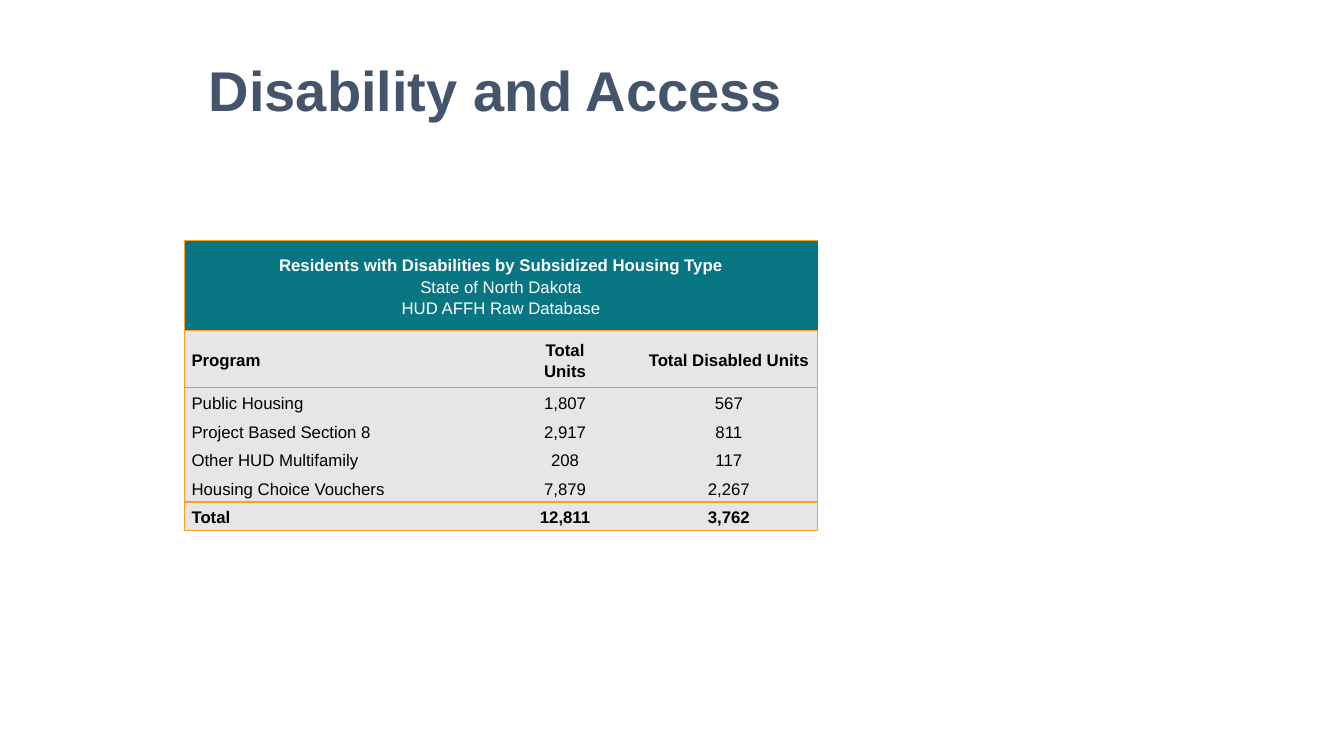
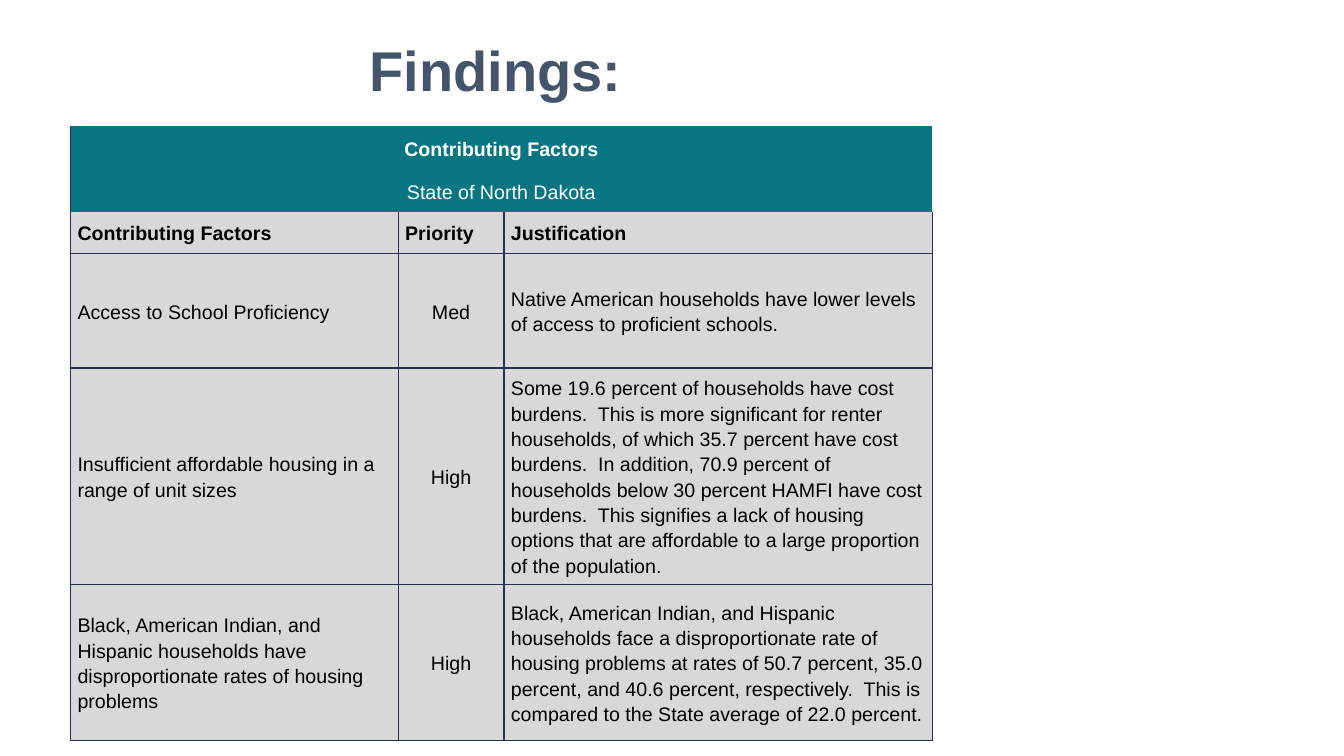
from dataclasses import dataclass

from lxml.etree import SubElement
from pptx import Presentation
from pptx.dml.color import RGBColor
from pptx.enum.text import MSO_ANCHOR, PP_ALIGN
from pptx.oxml.ns import qn
from pptx.util import Pt

LEFT, CENTER = PP_ALIGN.LEFT, PP_ALIGN.CENTER


@dataclass(frozen=True)
class Theme:
    font: str = "Arial"
    title: str = "44546A"
    band: str = "087582"
    white: str = "FFFFFF"
    black: str = "000000"
    pale: str = "E7E6E6"
    grey: str = "D8D8D8"
    orange: str = "FAA21A"
    navy: str = "26314D"
    rule: str = "A5A5A5"
    title_size: int = 40
    small_size: int = 12
    body_size: int = 14


@dataclass
class Row:
    height: float
    cells: tuple
    fill: str
    aligns: tuple
    color: str = Theme.black
    bold: bool = False


def write(tf, text, *, font, size, color, bold=False, align=LEFT, spacing=1.0, bold_first=False):
    for i, line in enumerate(text.split("\n")):
        p = tf.add_paragraph() if i else tf.paragraphs[0]
        p.alignment = align
        p.line_spacing = spacing
        r = p.add_run()
        r.text = line
        r.font.name = font
        r.font.size = Pt(size)
        r.font.bold = bold or (bold_first and i == 0)
        r.font.color.rgb = RGBColor.from_string(color)


def set_border(cell, side, line):
    ln = SubElement(cell._tc.get_or_add_tcPr(), qn(f"a:ln{side}"))
    if line is None:
        ln.set("w", "0")
        SubElement(ln, qn("a:noFill"))
        return
    color, width = line
    ln.set("w", str(Pt(width)))
    fill = SubElement(ln, qn("a:solidFill"))
    SubElement(fill, qn("a:srgbClr")).set("val", color)


class Deck:
    def __init__(self, theme):
        self.theme = theme
        self.prs = Presentation()
        self.prs.slide_width = Pt(960)
        self.prs.slide_height = Pt(540)
        self.s = None

    def slide(self, title, middle):
        self.s = self.prs.slides.add_slide(self.prs.slide_layouts[6])
        height = 60
        sp = self.s.shapes.add_textbox(Pt(23), Pt(middle - height / 2), Pt(662), Pt(height))
        tf = sp.text_frame
        tf.word_wrap = True
        tf.vertical_anchor = MSO_ANCHOR.MIDDLE
        write(tf, title, font=self.theme.font, size=self.theme.title_size,
              color=self.theme.title, bold=True, align=CENTER)

    def table(self, left, top, widths, rows, rules, outer, inner=None, size=12, margin_top=0):
        height = sum(row.height for row in rows)
        frame = self.s.shapes.add_table(len(rows), len(widths), Pt(left), Pt(top),
                                        Pt(sum(widths)), Pt(height))
        table = frame.table
        table.first_row = table.horz_banding = False
        for column, width in zip(table.columns, widths):
            column.width = Pt(width)
        last = len(widths) - 1
        for i, row in enumerate(rows):
            table.rows[i].height = Pt(row.height)
            merged = len(row.cells) == 1
            between = None if merged else inner
            for j in range(len(widths)):
                cell = table.cell(i, j)
                set_border(cell, "L", between if j else outer)
                set_border(cell, "R", between if j < last else outer)
                set_border(cell, "T", rules[i])
                set_border(cell, "B", rules[i + 1])
                cell.fill.solid()
                cell.fill.fore_color.rgb = RGBColor.from_string(row.fill)
                cell.margin_left = cell.margin_right = Pt(5)
                cell.margin_top, cell.margin_bottom = Pt(margin_top), Pt(0)
                cell.vertical_anchor = MSO_ANCHOR.MIDDLE
            if merged:
                table.cell(i, 0).merge(table.cell(i, last))
            for j, (text, align) in enumerate(zip(row.cells, row.aligns)):
                write(table.cell(i, j).text_frame, text, font=self.theme.font, size=size,
                      color=row.color, bold=row.bold, align=align, spacing=1.15,
                      bold_first=merged and i == 0)


def disability_slide(deck):
    t = deck.theme
    deck.slide("Disability and Access", 63.9)
    aligns = (LEFT, CENTER, CENTER)
    programs = (
        ("Public Housing", "1,807", "567"),
        ("Project Based Section 8", "2,917", "811"),
        ("Other HUD Multifamily", "208", "117"),
        ("Housing Choice Vouchers", "7,879", "2,267"),
    )
    heading = ("Residents with Disabilities by Subsidized Housing Type\n"
               "State of North Dakota\nHUD AFFH Raw Database")
    rows = [
        Row(64.6, (heading,), t.band, (CENTER,), t.white),
        Row(40.8, ("Program", "Total\nUnits", "Total Disabled Units"), t.pale, aligns, bold=True),
        *(Row(20.4, program, t.pale, aligns) for program in programs),
        Row(20.4, ("Total", "12,811", "3,762"), t.pale, aligns, bold=True),
    ]
    edge = (t.orange, 1)
    rules = [edge, edge, (t.rule, 0.75), None, None, None, (t.orange, 1.5), edge]
    deck.table(131.8, 171.6, (218.2, 107.3, 126.7), rows, rules, edge,
               size=t.small_size, margin_top=0.7)


def findings_slide(deck):
    t = deck.theme
    deck.slide("Findings:", 49.6)
    aligns = (LEFT, CENTER, LEFT)
    factors = (
        (82, "Access to School Proficiency", "Med",
         "Native American households have lower levels of access to proficient schools."),
        (145, "Insufficient affordable housing in a range of unit sizes", "High",
         "Some 19.6 percent of households have cost burdens.  This is more significant for "
         "renter households, of which 35.7 percent have cost burdens.  In addition, 70.9 percent "
         "of households below 30 percent HAMFI have cost burdens.  This signifies a lack of "
         "housing options that are affordable to a large proportion of the population."),
        (111.6, "Black, American Indian, and Hispanic households have disproportionate rates of "
         "housing problems", "High",
         "Black, American Indian, and Hispanic households face a disproportionate rate of housing "
         "problems at rates of 50.7 percent, 35.0 percent, and 40.6 percent, respectively.  This "
         "is compared to the State average of 22.0 percent."),
    )
    rows = [
        Row(31.5, ("Contributing Factors",), t.band, (CENTER,), t.white),
        Row(29.7, ("State of North Dakota",), t.band, (CENTER,), t.white),
        Row(29.7, ("Contributing Factors", "Priority", "Justification"), t.grey,
            (LEFT, LEFT, LEFT), bold=True),
        *(Row(height, cells, t.grey, aligns) for height, *cells in factors),
    ]
    edge = (t.navy, 1)
    rules = [None] * 3 + [edge] * 4
    deck.table(50.4, 90, (234, 75.6, 306), rows, rules, edge, inner=edge, size=t.body_size)


def main():
    deck = Deck(Theme())
    disability_slide(deck)
    findings_slide(deck)
    deck.prs.save("out.pptx")


if __name__ == "__main__":
    main()
